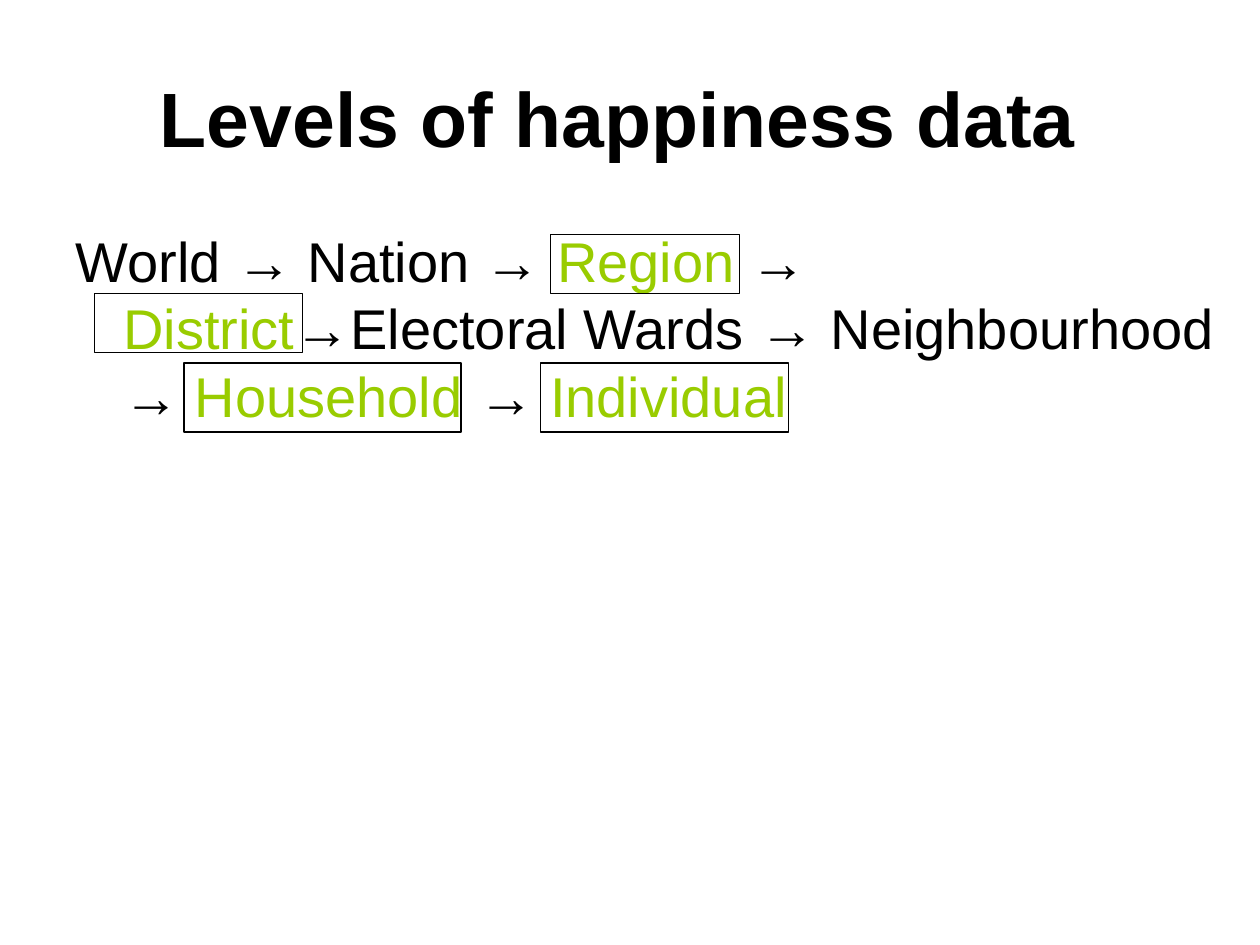
from pptx import Presentation
from pptx.dml.color import RGBColor
from pptx.enum.shapes import MSO_SHAPE
from pptx.enum.text import MSO_ANCHOR, PP_ALIGN
from pptx.util import Inches, Pt

RECTANGLE = MSO_SHAPE.RECTANGLE
TOP, MIDDLE = MSO_ANCHOR.TOP, MSO_ANCHOR.MIDDLE
LEFT, CENTER = PP_ALIGN.LEFT, PP_ALIGN.CENTER

BLACK = RGBColor(0x00, 0x00, 0x00)
GREEN = RGBColor(0x99, 0xCC, 0x00)

WIDTH, HEIGHT = Inches(10), Inches(7.5)
COLUMNS, ROWS = 100, 75


class SlideBuilder:
    font_name = "Arial"
    title_size = Pt(44)
    body_size = Pt(32)
    body_spacing = Pt(6.4)
    hanging_indent = Inches(0.38)
    outline_width = Pt(0.75)

    def __init__(self, slide):
        self.slide = slide

    def place(self, left, top, width, height):
        column, row = WIDTH / COLUMNS, HEIGHT / ROWS
        return (round(left * column), round(top * row),
                round(width * column), round(height * row))

    def add_text(self, area, runs, size, alignment, anchor, bold=False):
        frame = self.slide.shapes.add_textbox(*self.place(*area)).text_frame
        frame.word_wrap = True
        frame.vertical_anchor = anchor
        paragraph = frame.paragraphs[0]
        paragraph.alignment = alignment
        for text, color in runs:
            run = paragraph.add_run()
            run.text = text
            run.font.name = self.font_name
            run.font.size = size
            run.font.bold = bold
            run.font.color.rgb = color
        return paragraph

    def add_title(self, area, text):
        self.add_text(area, [(text, BLACK)], self.title_size, CENTER, MIDDLE, bold=True)

    def add_body(self, area, runs):
        paragraph = self.add_text(area, runs, self.body_size, LEFT, TOP)
        paragraph.space_before = self.body_spacing
        properties = paragraph._p.get_or_add_pPr()
        properties.set("marL", str(self.hanging_indent))
        properties.set("indent", str(-self.hanging_indent))

    def add_outline(self, area):
        shape = self.slide.shapes.add_shape(RECTANGLE, *self.place(*area))
        shape.shadow.inherit = False
        shape.fill.background()
        shape.line.color.rgb = BLACK
        shape.line.width = self.outline_width


def main():
    presentation = Presentation()
    presentation.slide_width, presentation.slide_height = WIDTH, HEIGHT
    builder = SlideBuilder(presentation.slides.add_slide(presentation.slide_layouts[6]))

    builder.add_title((3.1, 3, 91.9, 12.5), "Levels of happiness data")
    builder.add_body((5, 17.5, 95, 49.5), [
        ("World → Nation → ", BLACK),
        ("Region ", GREEN),
        ("→ ", BLACK),
        ("District", GREEN),
        ("→Electoral Wards → Neighbourhood → ", BLACK),
        ("Household", GREEN),
        (" → ", BLACK),
        ("Individual", GREEN),
    ])

    level_outlines = {
        "Region": (43.7, 18.6, 15, 4.7),
        "District": (7.5, 23.3, 16.5, 4.7),
        "Household": (14.6, 28.8, 22, 5.5),
        "Individual": (42.9, 28.8, 19.7, 5.5),
    }
    for area in level_outlines.values():
        builder.add_outline(area)

    presentation.save("out.pptx")


if __name__ == "__main__":
    main()
